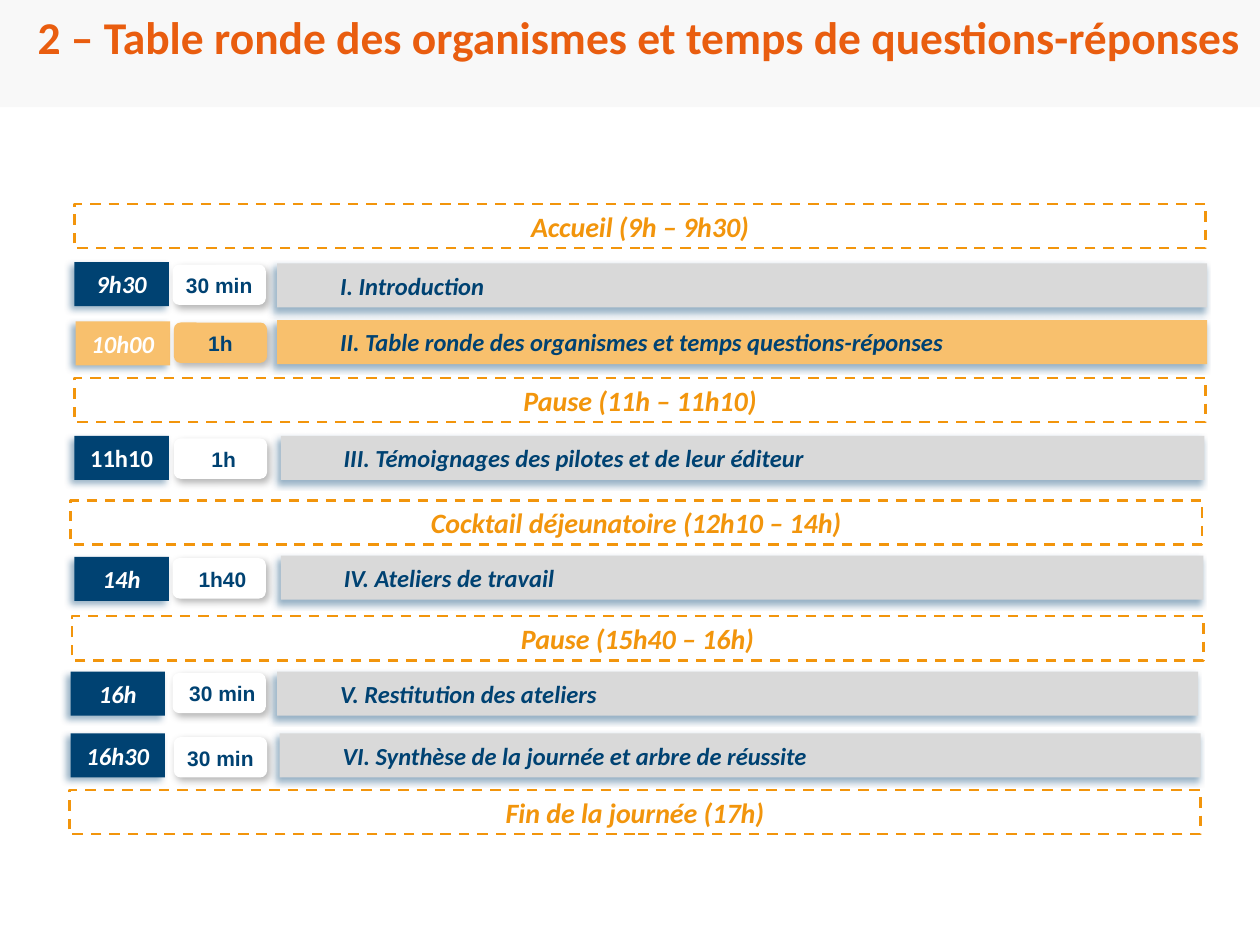
from dataclasses import dataclass

from lxml import etree
from pptx import Presentation
from pptx.dml.color import RGBColor
from pptx.enum.dml import MSO_LINE
from pptx.enum.shapes import MSO_SHAPE
from pptx.enum.text import MSO_ANCHOR, PP_ALIGN
from pptx.oxml.ns import qn
from pptx.util import Inches, Pt

RECT, ROUND = MSO_SHAPE.RECTANGLE, MSO_SHAPE.ROUNDED_RECTANGLE
LEFT, CENTER = PP_ALIGN.LEFT, PP_ALIGN.CENTER
TOP, MIDDLE = MSO_ANCHOR.TOP, MSO_ANCHOR.MIDDLE
DASH = MSO_LINE.DASH

NAVY = RGBColor(0x00, 0x42, 0x72)
ORANGE = RGBColor(0xF2, 0x95, 0x0C)
AMBER = RGBColor(0xF8, 0xC0, 0x6D)
RED_ORANGE = RGBColor(0xE9, 0x5D, 0x0F)
GREY = RGBColor(0xD9, 0xD9, 0xD9)
PALE = RGBColor(0xF8, 0xF8, 0xF8)
WHITE = RGBColor(0xFF, 0xFF, 0xFF)
BLACK = RGBColor(0x00, 0x00, 0x00)

# Grid of 100 columns by 75 rows: one cell is a tenth of an inch
CELL = Inches(0.1)
ROW_H = 3.5
BREAK_W = 89.8
START_W = 7.5
DURATION_W, DURATION_H = 7.4, 3.2


@dataclass(frozen=True)
class Shadow:
    color: RGBColor
    alpha: int
    blur: float
    dist: float
    angle: int


@dataclass(frozen=True)
class Break:
    text: str
    x: float
    y: float


@dataclass(frozen=True)
class Session:
    start: str
    start_x: float
    start_y: float
    duration: str
    duration_x: float
    duration_y: float
    title: str
    title_x: float
    title_y: float
    title_w: float
    nudge: float = 0  # extra left inset of the duration
    current: bool = False
    italic: bool = True


BLUE_SHADOW = Shadow(NAVY, 40, 4, 3, 135)
BLACK_SHADOW = Shadow(BLACK, 30, 4.5, 2.6, 53)

BREAKS = [
    Break("Accueil (9h – 9h30)", 5.9, 16.2),
    Break("Pause (11h – 11h10)", 5.9, 30),
    Break("Cocktail déjeunatoire (12h10 – 14h)", 5.6, 39.7),
    Break("Pause (15h40 – 16h)", 5.7, 48.9),
    Break("Fin de la journée (17h)", 5.5, 62.7),
]

SESSIONS = [
    Session("9h30", 5.9, 20.8, "30 min", 13.7, 21,
            "I. Introduction", 22, 20.9, 73.8),
    Session("10h00", 6, 25.5, "1h", 13.8, 25.6,
            "II. Table ronde des organismes et temps questions-réponses",
            22, 25.4, 73.8, current=True),
    Session("11h10", 5.9, 34.6, "1h", 13.8, 34.8,
            "III. Témoignages des pilotes et de leur éditeur",
            22.3, 34.6, 73.3, nudge=0.5, italic=False),
    Session("14h", 5.9, 44.2, "1h40", 13.7, 44.3,
            "IV. Ateliers de travail", 22.3, 44.1, 73.2, nudge=0.5),
    Session("16h", 5.6, 53.3, "30 min", 13.7, 53.4,
            "V. Restitution des ateliers", 22, 53.3, 73.1, nudge=0.5),
    Session("16h30", 5.6, 58.2, "30 min", 13.8, 58.5,
            "VI. Synthèse de la journée et arbre de réussite",
            22.2, 58.2, 73.1),
]


def cells(n: float) -> int:
    return round(n * CELL)


def add_box(slide, kind, x: float, y: float, w: float, h: float, fill=None):
    s = slide.shapes.add_shape(kind, cells(x), cells(y), cells(w), cells(h))
    s.shadow.inherit = False
    s.line.fill.background()
    if fill is None:
        s.fill.background()
    else:
        s.fill.solid()
        s.fill.fore_color.rgb = fill
    return s


def add_shadow(s, shadow: Shadow) -> None:
    effects = s._element.spPr.find(qn("a:effectLst"))
    outer = etree.SubElement(
        effects, qn("a:outerShdw"), blurRad=str(Pt(shadow.blur)),
        dist=str(Pt(shadow.dist)), dir=str(shadow.angle * 60000),
        algn="ctr", rotWithShape="0")
    clr = etree.SubElement(outer, qn("a:srgbClr"), val=str(shadow.color))
    etree.SubElement(clr, qn("a:alpha"), val=str(shadow.alpha * 1000))


def write(s, text: str, color: RGBColor, size: float, align=CENTER,
          anchor=MIDDLE, wrap: bool = True, indent: float = 0, **extra) -> None:
    tf = s.text_frame
    tf.word_wrap = wrap
    tf.vertical_anchor = anchor
    p = tf.paragraphs[0]
    p.alignment = align
    if indent:
        p._p.get_or_add_pPr().set("marL", str(cells(indent)))
    r = p.add_run()
    r.text = text
    r.font.color.rgb = color
    style = {"name": "Calibri", "size": Pt(size), "bold": True} | extra
    for key, value in style.items():
        setattr(r.font, key, value)


def add_break(slide, b: Break) -> None:
    s = add_box(slide, RECT, b.x, b.y, BREAK_W, ROW_H)
    s.line.color.rgb = ORANGE
    s.line.width = Pt(1.5)
    s.line.dash_style = DASH
    write(s, b.text, ORANGE, 16, italic=True)


def add_session(slide, n: Session) -> None:
    # Title bar
    s = add_box(slide, RECT, n.title_x, n.title_y, n.title_w, ROW_H,
                AMBER if n.current else GREY)
    add_shadow(s, BLUE_SHADOW)
    write(s, n.title, NAVY, 14, LEFT, indent=4, italic=True)

    # Start time
    s = add_box(slide, RECT, n.start_x, n.start_y, START_W, ROW_H,
                AMBER if n.current else NAVY)
    add_shadow(s, BLUE_SHADOW)
    write(s, n.start, WHITE, 14, italic=n.italic)

    # Duration
    s = add_box(slide, ROUND, n.duration_x, n.duration_y,
                DURATION_W, DURATION_H, AMBER if n.current else WHITE)
    add_shadow(s, BLACK_SHADOW)
    s.text_frame.margin_left = cells(1 + n.nudge)
    write(s, n.duration, NAVY, 12, anchor=TOP, wrap=False, name="Arial")


def main() -> None:
    prs = Presentation()
    prs.slide_width, prs.slide_height = cells(100), cells(75)
    slide = prs.slides.add_slide(prs.slide_layouts[6])

    # Header band and title
    add_box(slide, RECT, 0, 0, 100, 8.5, PALE)
    s = slide.shapes.add_textbox(cells(2), cells(0.9), cells(98), cells(7.9))
    write(s, "2 – Table ronde des organismes et temps de questions-réponses",
          RED_ORANGE, 26, LEFT, TOP)
    s.text_frame.paragraphs[0].line_spacing = 0.85

    # Agenda
    for b in BREAKS:
        add_break(slide, b)
    for n in SESSIONS:
        add_session(slide, n)

    prs.save("out.pptx")


if __name__ == "__main__":
    main()
